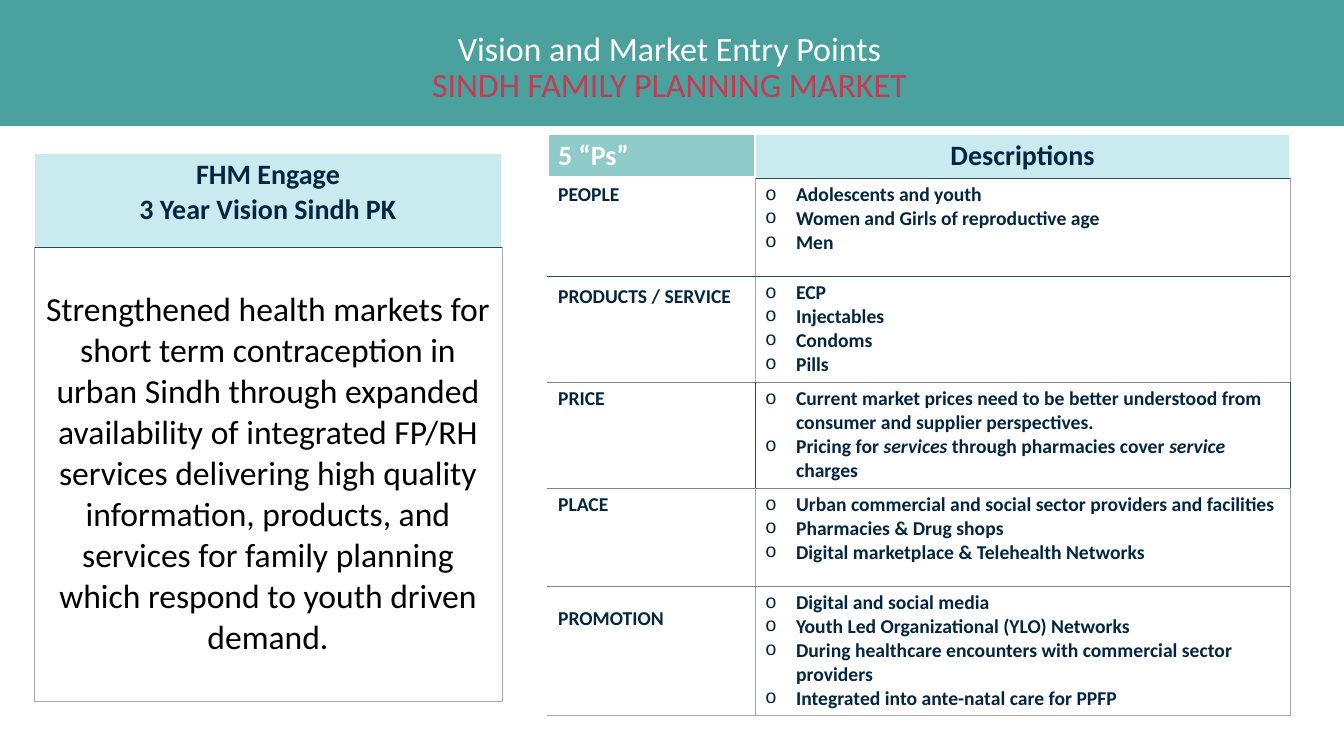
from dataclasses import dataclass

from lxml import etree
from pptx import Presentation
from pptx import util as u
from pptx.dml.color import RGBColor
from pptx.enum import shapes, text
from pptx.oxml.ns import qn

PX = 914400 / 100.8  # EMU in one px


@dataclass(frozen=True)
class Theme:
    font: str = "Calibri"
    bullet_font: str = "Courier New"
    teal: str = "4AA19E"
    mid_teal: str = "8ECBC9"
    pale_teal: str = "C9EBEF"
    dark_teal: str = "25504F"
    navy: str = "022540"
    crimson: str = "C33C54"
    white: str = "FFFFFF"
    black: str = "000000"
    grey: str = "808080"
    light_grey: str = "A6A6A6"
    title_size: float = 24.3
    vision_size: float = 24
    heading_size: float = 20
    body_size: float = 14


THEME = Theme()


@dataclass(frozen=True)
class Line:
    color: str
    width: float


WHITE = Line(THEME.white, 1)
THICK = Line(THEME.white, 3)
DARK = Line(THEME.dark_teal, 0.25)
GREY = Line(THEME.grey, 0.25)
LIGHT = Line(THEME.light_grey, 0.75)


@dataclass(frozen=True)
class Borders:
    left: Line
    right: Line
    top: Line
    bottom: Line


@dataclass(frozen=True)
class Style:
    size: float
    color: str = THEME.navy
    bold: bool = True
    centred: bool = False
    bulleted: bool = False


@dataclass(frozen=True)
class MarketRow:
    label: str
    points: tuple[str, ...]  # *asterisks* enclose italics
    height: int
    side: Line = LIGHT
    bottom: Line = GREY
    label_drop: int = 0


HEADING = Style(THEME.heading_size, centred=True)
HEADING_LEFT = Style(THEME.heading_size, THEME.white)
VISION = Style(THEME.vision_size, THEME.black, bold=False, centred=True)
LABEL = Style(THEME.body_size)
POINT = Style(THEME.body_size, bulleted=True)

VISION_TEXT = (
    "Strengthened health markets for short term contraception in urban Sindh "
    "through expanded availability of integrated FP/RH services delivering high "
    "quality information, products, and services for family planning which "
    "respond to youth driven demand."
)
MARKET_ROWS = (
    MarketRow("PEOPLE", ("Adolescents and youth", "Women and Girls of reproductive age", "Men"),
              98, bottom=DARK),
    MarketRow("PRODUCTS / SERVICE", ("ECP", "Injectables", "Condoms", "Pills"),
              106, label_drop=4),
    MarketRow("PRICE", (
        "Current market prices need to be better understood from consumer and supplier perspectives.",
        "Pricing for *services* through pharmacies cover *service* charges",
    ), 106, side=DARK),
    MarketRow("PLACE", (
        "Urban commercial and social sector providers and facilities",
        "Pharmacies & Drug shops",
        "Digital marketplace & Telehealth Networks",
    ), 98),
    MarketRow("PROMOTION", (
        "Digital and social media",
        "Youth Led Organizational (YLO) Networks",
        "During healthcare encounters with commercial sector providers",
        "Integrated into ante-natal care for PPFP",
    ), 130, bottom=LIGHT, label_drop=16),
)


def px(length: float) -> u.Emu:
    return u.Emu(round(length * PX))


def add_bullet(para) -> None:
    props = para._p.get_or_add_pPr()
    props.set("marL", str(px(31)))
    props.set("indent", str(-px(31)))
    etree.SubElement(props, qn("a:buFont"), typeface=THEME.bullet_font)
    etree.SubElement(props, qn("a:buChar"), char="o")


def set_font(font, style: Style) -> None:
    font.name = THEME.font
    font.size = u.Pt(style.size)
    font.bold = style.bold
    font.color.rgb = RGBColor.from_string(style.color)


def write(frame, lines: tuple[str, ...], style: Style) -> None:
    for index, line in enumerate(lines):
        para = frame.add_paragraph() if index else frame.paragraphs[0]
        para.alignment = text.PP_ALIGN.CENTER if style.centred else text.PP_ALIGN.LEFT
        if style.bulleted:
            add_bullet(para)
        set_font(para.font, style)
        for part, words in enumerate(line.split("*")):
            span = para.add_run()
            span.text = words
            if part % 2:
                span.font.italic = True


def set_borders(cell, borders: Borders) -> None:
    props = cell._tc.get_or_add_tcPr()
    sides = (("L", borders.left), ("R", borders.right), ("T", borders.top), ("B", borders.bottom))
    for index, (side, line) in enumerate(sides):
        edge = etree.Element(qn(f"a:ln{side}"), w=str(u.Pt(line.width)))
        fill = etree.SubElement(edge, qn("a:solidFill"))
        etree.SubElement(fill, qn("a:srgbClr"), val=line.color)
        props.insert(index, edge)


def fill_cell(cell, lines: tuple[str, ...], style: Style, borders: Borders,
              fill: str | None = None) -> None:
    if fill:
        cell.fill.solid()
        cell.fill.fore_color.rgb = RGBColor.from_string(fill)
    else:
        cell.fill.background()
    set_borders(cell, borders)
    write(cell.text_frame, lines, style)


def add_grid(page, left: int, top: int, widths: list[int], heights: list[int]):
    grid = page.shapes.add_table(len(heights), len(widths), px(left), px(top),
                                 px(sum(widths)), px(sum(heights))).table
    grid.first_row = grid.horz_banding = False
    for column, width in zip(grid.columns, widths):
        column.width = px(width)
    for row, height in zip(grid.rows, heights):
        row.height = px(height)
    return grid


def add_title(page) -> None:
    band = page.shapes.add_shape(shapes.MSO_SHAPE.RECTANGLE, 0, 0, px(1344), px(126))
    band.shadow.inherit = False
    band.fill.solid()
    band.fill.fore_color.rgb = RGBColor.from_string(THEME.teal)
    band.line.fill.background()

    box = page.shapes.add_textbox(px(48), px(26), px(1243), px(85))
    frame = box.text_frame
    frame.word_wrap = True
    frame.vertical_anchor = text.MSO_ANCHOR.MIDDLE
    style = Style(THEME.title_size, THEME.white, bold=False, centred=True)
    write(frame, ("Vision and Market Entry Points",), style)
    para = frame.paragraphs[0]
    para.line_spacing = 0.9
    para.add_line_break()
    span = para.add_run()
    span.text = "SINDH FAMILY PLANNING MARKET"
    span.font.color.rgb = RGBColor.from_string(THEME.crimson)


def add_vision(page) -> None:
    grid = add_grid(page, 34, 153, [468], [94, 454])
    fill_cell(grid.cell(0, 0), ("FHM Engage", "3 Year Vision Sindh PK"), HEADING,
              Borders(WHITE, WHITE, WHITE, DARK), THEME.pale_teal)
    body = grid.cell(1, 0)
    fill_cell(body, (VISION_TEXT,), VISION, Borders(LIGHT, LIGHT, DARK, LIGHT))
    body.vertical_anchor = text.MSO_ANCHOR.MIDDLE


def add_market(page) -> None:
    grid = add_grid(page, 548, 134, [207, 535], [44] + [row.height for row in MARKET_ROWS])
    fill_cell(grid.cell(0, 0), ("5 “Ps”",), HEADING_LEFT,
              Borders(WHITE, WHITE, WHITE, THICK), THEME.mid_teal)
    fill_cell(grid.cell(0, 1), ("Descriptions",), HEADING,
              Borders(WHITE, WHITE, WHITE, DARK), THEME.pale_teal)
    label_top, point_top = WHITE, DARK
    for index, row in enumerate(MARKET_ROWS, start=1):
        label, points = grid.cell(index, 0), grid.cell(index, 1)
        fill_cell(label, (row.label,), LABEL, Borders(WHITE, row.side, label_top, row.bottom))
        label.margin_top = px(5 + row.label_drop)
        fill_cell(points, row.points, POINT, Borders(row.side, row.side, point_top, row.bottom))
        label_top = point_top = row.bottom


def main() -> None:
    deck = Presentation()
    deck.slide_width, deck.slide_height = px(1344), px(756)
    page = deck.slides.add_slide(deck.slide_layouts[6])
    add_title(page)
    add_vision(page)
    add_market(page)
    deck.save("out.pptx")


if __name__ == "__main__":
    main()
